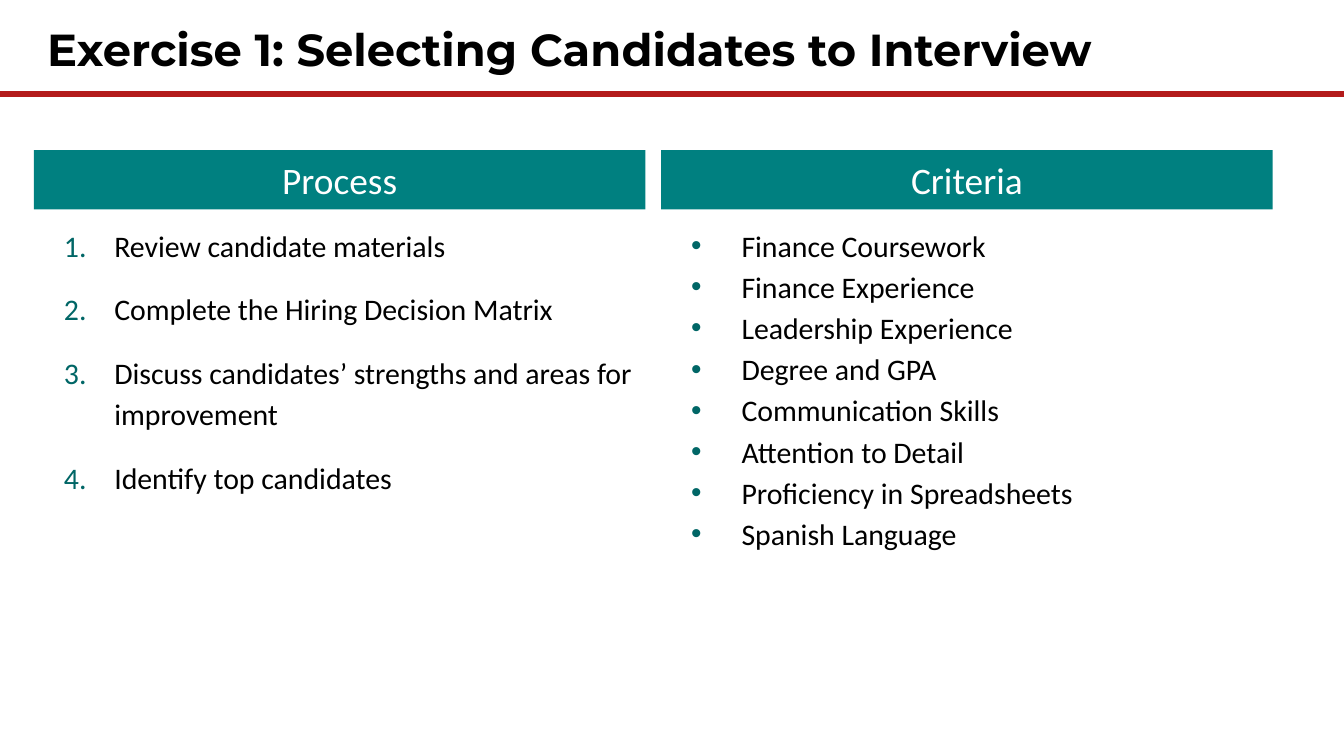
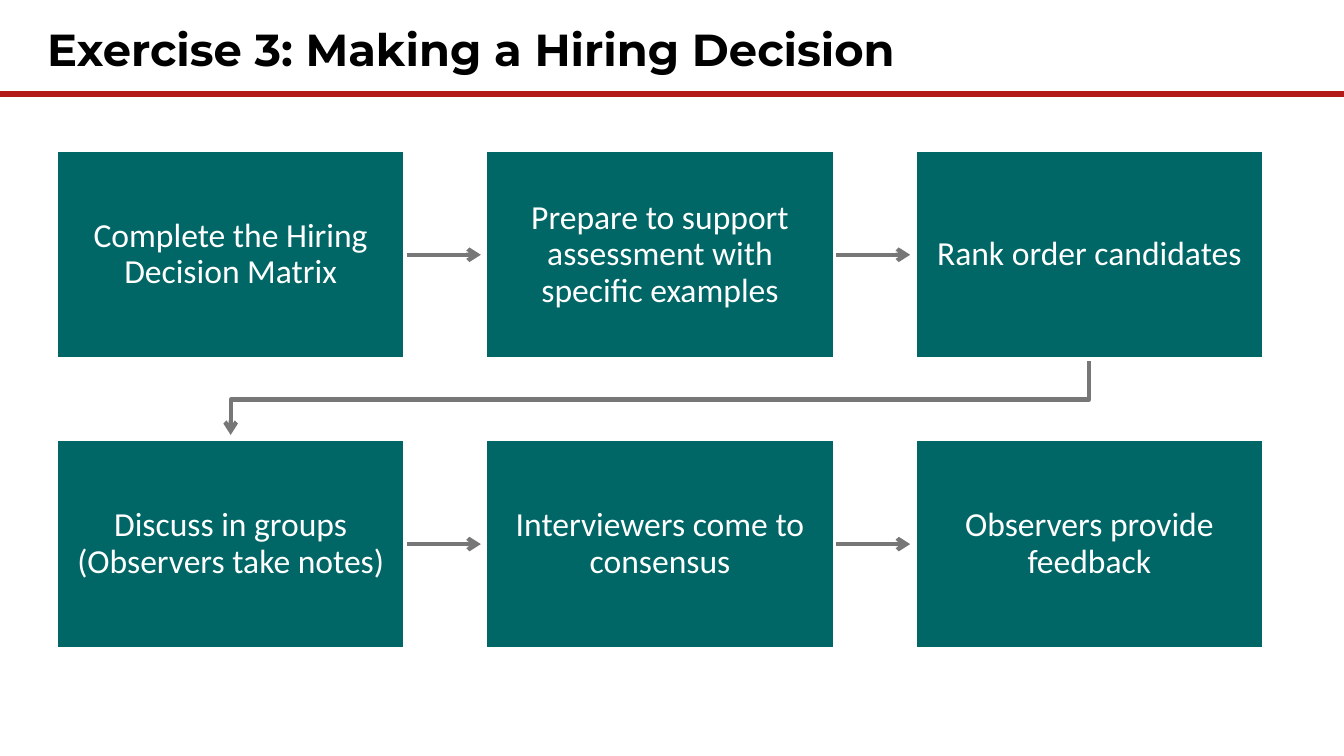
"""Builds two hiring exercise slides: process with criteria, and a decision flow."""
from dataclasses import dataclass

from lxml import etree
from pptx import Presentation
from pptx.dml.color import RGBColor
from pptx.enum.shapes import MSO_CONNECTOR, MSO_SHAPE
from pptx.enum.text import MSO_ANCHOR, PP_ALIGN
from pptx.oxml.ns import qn
from pptx.util import Pt

RECT = MSO_SHAPE.RECTANGLE
STRAIGHT = MSO_CONNECTOR.STRAIGHT
TOP, MIDDLE = MSO_ANCHOR.TOP, MSO_ANCHOR.MIDDLE
LEFT, CENTER = PP_ALIGN.LEFT, PP_ALIGN.CENTER

COLORS = {
    "text": "000000",
    "white": "FFFFFF",
    "rule": "B31B1B",
    "header": "008080",
    "step": "006666",
    "arrow": "777777",
}
BODY_FONT, TITLE_FONT = "Calibri", "Montserrat"
SLIDE_W, SLIDE_H = 720, 405
CONTENT_TOP = 80.5

HEADER_W, HEADER_H = 327.6, 31.7
LIST_TOP, LIST_W, LIST_H = 111.8, 328.3, 269.3

STEP_W, STEP_H = 187, 112
STEP_LEFT, STEP_DX, STEP_DY = 30.1, 230, 155
ARROW_LEN = 40.5


@dataclass(frozen=True)
class Column:
    left: float
    heading: str
    items: tuple[str, ...]
    numbered: bool
    space_after: float


@dataclass(frozen=True)
class Step:
    text: str
    row: int
    col: int

    @property
    def left(self) -> float:
        return STEP_LEFT + self.col * STEP_DX

    @property
    def top(self) -> float:
        return CONTENT_TOP + self.row * STEP_DY

    @property
    def center_x(self) -> float:
        return self.left + STEP_W / 2

    @property
    def center_y(self) -> float:
        return self.top + STEP_H / 2


COLUMNS = (
    Column(18.2, "Process", (
        "Review candidate materials",
        "Complete the Hiring Decision Matrix",
        "Discuss candidates’ strengths and areas for improvement",
        "Identify top candidates",
    ), True, 12),
    Column(354.2, "Criteria", (
        "Finance Coursework",
        "Finance Experience",
        "Leadership Experience",
        "Degree and GPA",
        "Communication Skills",
        "Attention to Detail",
        "Proficiency in Sheets",
        "Spanish Language",
    ), False, 0),
)
COLUMNS = tuple(
    Column(c.left, c.heading,
           tuple(i.replace("Sheets", "Spreadsheets") for i in c.items),
           c.numbered, c.space_after)
    for c in COLUMNS
)

STEP_TEXTS = (
    ("Complete the Hiring Decision Matrix",
     "Prepare to support assessment with specific examples",
     "Rank order candidates"),
    ("Discuss in groups (Observers take notes)",
     "Interviewers come to consensus",
     "Observers provide feedback"),
)


def rgb(name: str) -> RGBColor:
    return RGBColor.from_string(COLORS[name])


def setup_frame(tf, margin_x: float, margin_y: float, anchor) -> None:
    tf.word_wrap = True
    tf.margin_left = tf.margin_right = Pt(margin_x)
    tf.margin_top = tf.margin_bottom = Pt(margin_y)
    tf.vertical_anchor = anchor


def add_run(p, text: str, size: float, color: str, font: str = BODY_FONT,
            bold: bool = False, align=LEFT) -> None:
    p.alignment = align
    r = p.add_run()
    r.text = text
    r.font.name, r.font.size, r.font.bold = font, Pt(size), bold
    r.font.color.rgb = rgb(color)


def set_bullet(p, numbered: bool) -> None:
    pPr = p._p.get_or_add_pPr()
    pPr.set("marL", str(Pt(36)))
    pPr.set("indent", str(Pt(-27)))
    clr = etree.SubElement(pPr, qn("a:buClr"))
    etree.SubElement(clr, qn("a:srgbClr"), val=COLORS["step"])
    if numbered:
        etree.SubElement(pPr, qn("a:buFont"), typeface=BODY_FONT)
        etree.SubElement(pPr, qn("a:buAutoNum"), type="arabicPeriod")
    else:
        etree.SubElement(pPr, qn("a:buFont"), typeface="Arial")
        etree.SubElement(pPr, qn("a:buChar"), char="•")


def add_box(slide, left: float, top: float, width: float, height: float, fill: str):
    sp = slide.shapes.add_shape(RECT, Pt(left), Pt(top), Pt(width), Pt(height))
    sp.shadow.inherit = False
    sp.fill.solid()
    sp.fill.fore_color.rgb = rgb(fill)
    sp.line.fill.background()
    return sp


def style_line(sp, color: str, width: float, arrow: bool = False) -> None:
    sp.line.color.rgb = rgb(color)
    sp.line.width = Pt(width)
    if arrow:
        etree.SubElement(sp.get_or_add_ln(), qn("a:tailEnd"), type="arrow")


def add_line(slide, x1: float, y1: float, x2: float, y2: float,
             color: str, width: float, arrow: bool = False) -> None:
    cxn = slide.shapes.add_connector(STRAIGHT, Pt(x1), Pt(y1), Pt(x2), Pt(y2))
    style_line(cxn, color, width, arrow)
    etree.SubElement(cxn._element.spPr, qn("a:effectLst"))


def add_titled_slide(prs, title: str):
    slide = prs.slides.add_slide(prs.slide_layouts[6])
    add_line(slide, SLIDE_W, 50.4, 0, 50.4, "rule", 3)
    tf = slide.shapes.add_textbox(Pt(18.2), Pt(4.3), Pt(671), Pt(45.4)).text_frame
    setup_frame(tf, 7.2, 7.2, TOP)
    add_run(tf.paragraphs[0], title, 24, "text", TITLE_FONT, True)
    return slide


def add_column(slide, column: Column) -> None:
    box = slide.shapes.add_textbox(Pt(column.left), Pt(LIST_TOP), Pt(LIST_W), Pt(LIST_H))
    tf = box.text_frame
    setup_frame(tf, 7.2, 7.2, TOP)
    for i, item in enumerate(column.items):
        p = tf.add_paragraph() if i else tf.paragraphs[0]
        p.line_spacing = 1.15
        p.space_after = Pt(column.space_after)
        set_bullet(p, column.numbered)
        add_run(p, item, 16, "text")
    sp = add_box(slide, column.left, CONTENT_TOP, HEADER_W, HEADER_H, "header")
    setup_frame(sp.text_frame, 7.2, 3.6, MIDDLE)
    add_run(sp.text_frame.paragraphs[0], column.heading, 20, "white", align=CENTER)


def add_step(slide, step: Step) -> None:
    sp = add_box(slide, step.left, step.top, STEP_W, STEP_H, "step")
    style_line(sp, "white", 2)
    setup_frame(sp.text_frame, 10, 10, MIDDLE)
    p = sp.text_frame.paragraphs[0]
    p.line_spacing = 0.9
    add_run(p, step.text, 18, "white", align=CENTER)


def add_step_arrow(slide, start: Step, end: Step) -> None:
    if start.row == end.row:
        x, y = start.left + STEP_W, start.center_y
        add_line(slide, x, y, x + ARROW_LEN, y, "arrow", 2.25, True)
        return
    bottom = start.top + STEP_H
    turn = (bottom + end.top) / 2
    points = ((start.center_x, turn), (end.center_x, turn),
              (end.center_x, bottom + ARROW_LEN))
    path = slide.shapes.build_freeform(Pt(start.center_x), Pt(bottom))
    path.add_line_segments([(Pt(x), Pt(y)) for x, y in points], close=False)
    sp = path.convert_to_shape()
    sp.shadow.inherit = False
    sp.fill.background()
    style_line(sp, "arrow", 2.25, True)


def main() -> None:
    prs = Presentation()
    prs.slide_width, prs.slide_height = Pt(SLIDE_W), Pt(SLIDE_H)

    slide = add_titled_slide(prs, "Exercise 1: Selecting Candidates to Interview")
    for column in COLUMNS:
        add_column(slide, column)

    slide = add_titled_slide(prs, "Exercise 3: Making a Hiring Decision")
    steps = [Step(text, row, col)
             for row, texts in enumerate(STEP_TEXTS)
             for col, text in enumerate(texts)]
    for start, end in zip(steps, steps[1:]):
        add_step_arrow(slide, start, end)
    for step in steps:
        add_step(slide, step)

    prs.save("out.pptx")


if __name__ == "__main__":
    main()
